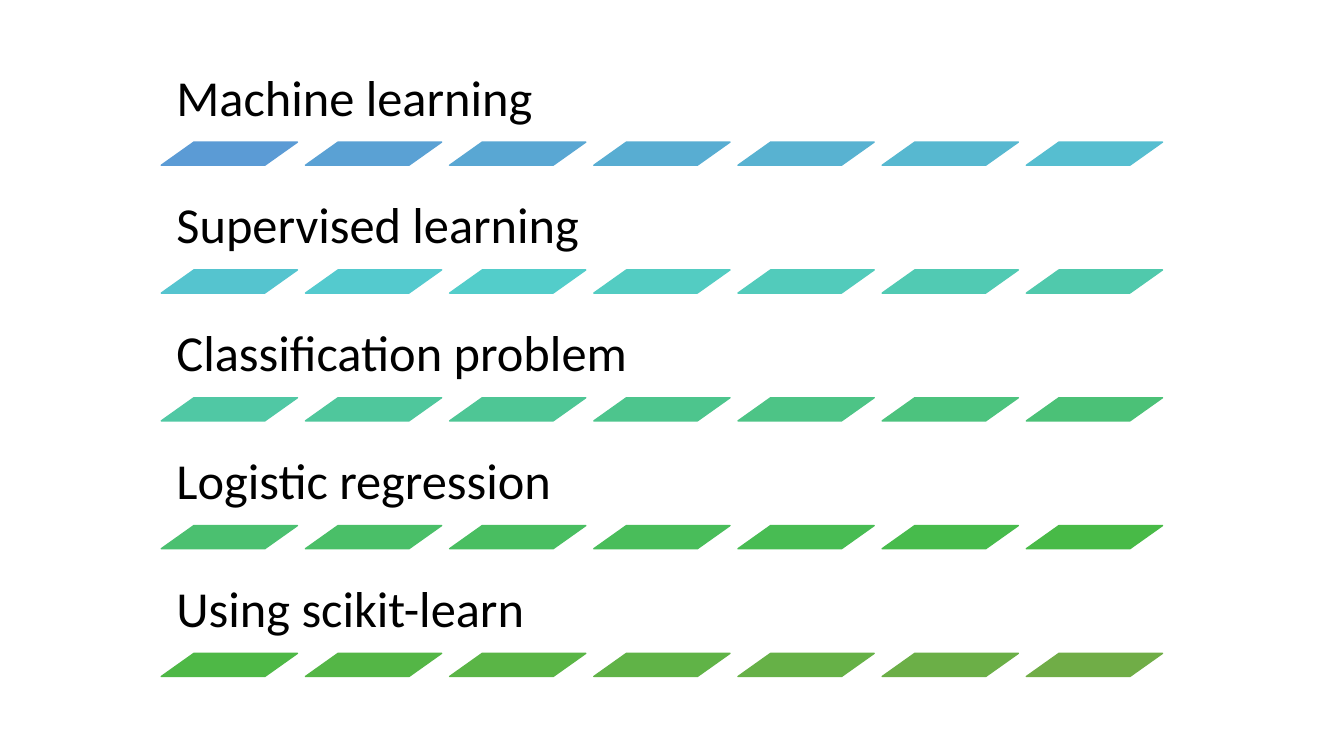
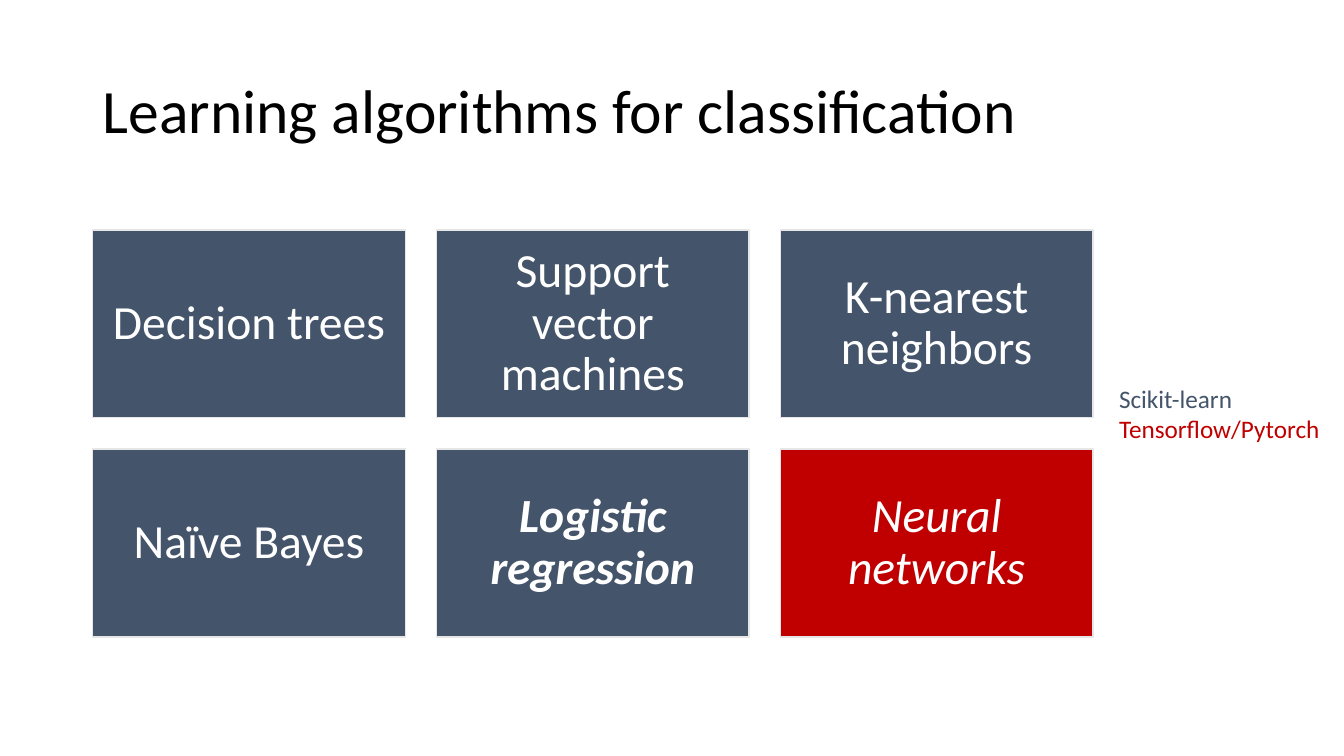
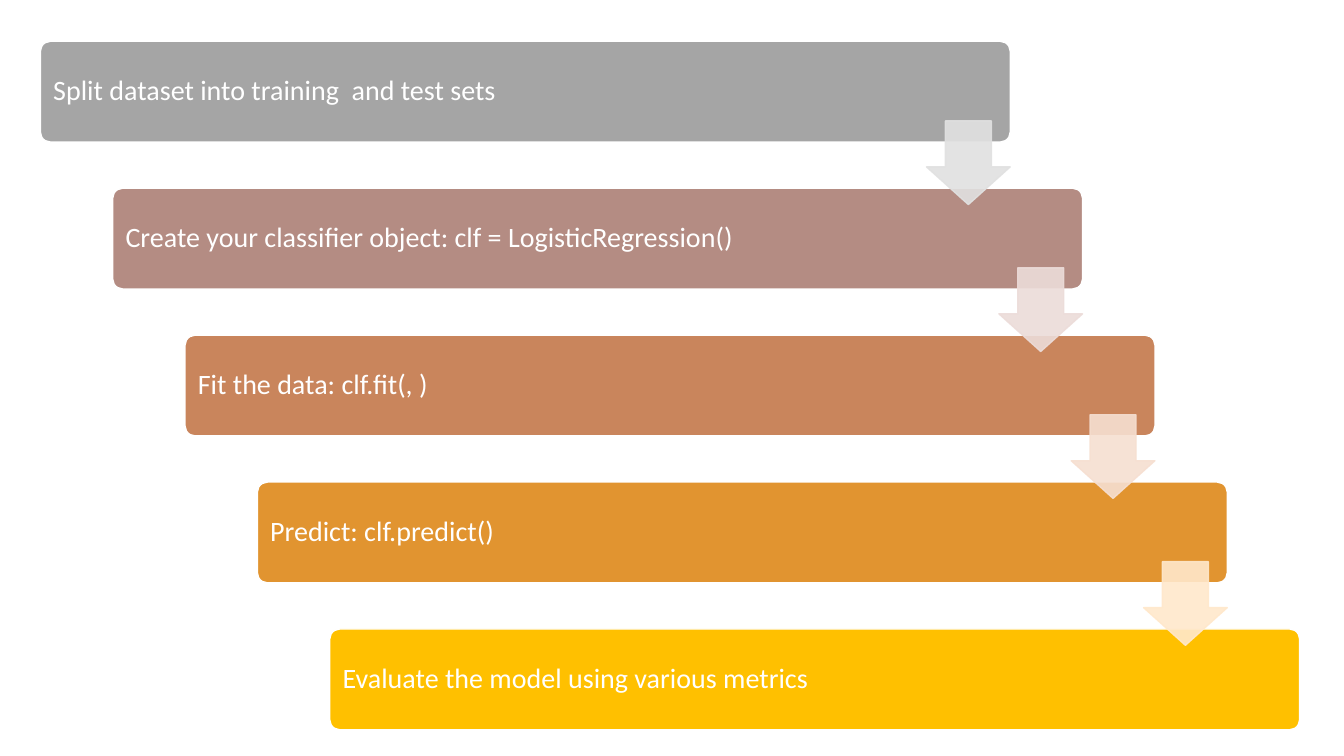
import colorsys

from lxml import etree
from pptx import Presentation
from pptx import util as u
from pptx.dml.color import RGBColor
from pptx.enum import shapes, text
from pptx.oxml import ns

SLIDE_W, SLIDE_H = 13.33, 7.5
FONT = "Calibri"
BLACK = RGBColor(0x00, 0x00, 0x00)
WHITE = RGBColor(0xFF, 0xFF, 0xFF)
BLUE = RGBColor(0x5B, 0x9B, 0xD5)
GREEN = RGBColor(0x70, 0xAD, 0x47)
SLATE = RGBColor(0x44, 0x54, 0x6A)
RED = RGBColor(0xC0, 0x00, 0x00)
PALE = RGBColor(0xE7, 0xE6, 0xE6)
GREY = RGBColor(0xA5, 0xA5, 0xA5)
GOLD = RGBColor(0xFF, 0xC0, 0x00)
PALE_GREY = RGBColor(0xE1, 0xE1, 0xE1)
PALE_GOLD = RGBColor(0xFF, 0xE8, 0xCB)

SHAPE = shapes.MSO_SHAPE
ALIGN = text.PP_ALIGN
ANCHOR = text.MSO_ANCHOR


def blend(first, last, count):
    """Return count colours whose hue, lightness and saturation run evenly."""
    a, b = (colorsys.rgb_to_hls(*(v / 255 for v in c)) for c in (first, last))
    colours = []
    for i in range(count):
        hls = [x + (y - x) * i / (count - 1) for x, y in zip(a, b)]
        colours.append(RGBColor(*(round(v * 255) for v in colorsys.hls_to_rgb(*hls))))
    return colours


def write(sp, lines, size, color=WHITE, colors=None, bold=False, italic=False,
          align=ALIGN.LEFT, anchor=ANCHOR.MIDDLE, inset=(0.1, 0.05),
          spacing=0.9, wrap=True):
    """Fill a shape with one paragraph per line; colors gives one per line."""
    tf = sp.text_frame
    tf.word_wrap = wrap
    tf.vertical_anchor = anchor
    tf.margin_left = tf.margin_right = u.Inches(inset[0])
    tf.margin_top = tf.margin_bottom = u.Inches(inset[1])
    for i, line in enumerate(lines.split("\n")):
        p = tf.paragraphs[0] if i == 0 else tf.add_paragraph()
        p.alignment = align
        p.line_spacing = spacing
        r = p.add_run()
        r.text = line
        r.font.name = FONT
        r.font.size = u.Pt(size)
        r.font.bold = bold
        r.font.italic = italic
        r.font.color.rgb = colors[i] if colors else color


def add_label(s, box, lines, **fmt):
    sp = s.shapes.add_textbox(*map(u.Inches, box))
    write(sp, lines, **fmt)


def add_block(s, kind, box, fill, line, adjust=(), alpha=None):
    sp = s.shapes.add_shape(kind, *map(u.Inches, box))
    sp.shadow.inherit = False
    sp.fill.solid()
    sp.fill.fore_color.rgb = fill
    sp.line.color.rgb = line
    sp.line.width = u.Pt(1)
    for i, value in enumerate(adjust):
        sp.adjustments[i] = value
    if alpha:
        for clr in sp._element.spPr.iter(ns.qn("a:srgbClr")):
            etree.SubElement(clr, ns.qn("a:alpha")).set("val", str(alpha * 1000))
    return sp


def topic_list(s, box, topics, dashes=7):
    """Stack topics, each underlined by a row of slanted dashes."""
    x, y, w, h = box
    row, col = h / len(topics), w / dashes
    label_h, dash_w, dash_h = 0.92, col * 0.945, 0.23
    colours = blend(BLUE, GREEN, len(topics) * dashes)
    for i, topic in enumerate(topics):
        top = y + i * row
        add_label(s, (x, top, w, label_h), topic, size=36, color=BLACK,
                  anchor=ANCHOR.BOTTOM, inset=(0.15, 0.15))
        for j in range(dashes):
            c = colours[i * dashes + j]
            add_block(s, SHAPE.PARALLELOGRAM,
                      (x + j * col, top + label_h, dash_w, dash_h), c, c, [1.408])


def tile_grid(s, box, tiles, cols=3, gap=0.31):
    """Lay tiles of (text, fill, font format) out row by row."""
    x, y, w, h = box
    rows = len(tiles) // cols
    tile_w, tile_h = (w - gap * (cols - 1)) / cols, (h - gap * (rows - 1)) / rows
    for i, (label, fill, fmt) in enumerate(tiles):
        row, col = divmod(i, cols)
        sp = add_block(s, SHAPE.RECTANGLE,
                       (x + col * (tile_w + gap), y + row * (tile_h + gap), tile_w, tile_h),
                       fill, PALE)
        write(sp, label, size=34, align=ALIGN.CENTER, inset=(0.14, 0.14), **fmt)


def staircase(s, box, steps):
    """Descend from step to step, with an arrow over each joint."""
    x, y, w, h = box
    step_w, step_h, arrow = 9.62, 1, 0.83
    joints = len(steps) - 1
    dx, dy = (w - step_w) / joints, (h - step_h) / joints
    for i, (step, fill) in enumerate(zip(steps, blend(GREY, GOLD, len(steps)))):
        sp = add_block(s, SHAPE.ROUNDED_RECTANGLE,
                       (x + i * dx, y + i * dy, step_w, step_h), fill, WHITE, [0.1])
        write(sp, step, size=20, inset=(0.1, 0.1))
    for i, c in enumerate(blend(PALE_GREY, PALE_GOLD, joints)):
        add_block(s, SHAPE.DOWN_ARROW,
                  (x + i * dx + step_w - arrow, y + i * dy + 0.79, arrow, arrow),
                  c, c, [0.55, 0.45], alpha=90)


def topics_slide(s):
    topic_list(s, (0.12 * SLIDE_W, 0.49, 10.01, 6.34),
               ["Machine learning", "Supervised learning", "Classification problem",
                "Logistic regression", "Using scikit-learn"])


def algorithms_slide(s):
    left = 0.92
    add_label(s, (left, 0.4, SLIDE_W - 2 * left, 1.45),
              "Learning algorithms for classification", size=44, color=BLACK)
    tile_grid(s, (left, 2.28, 9.92, 4.04), [
        ("Decision trees", SLATE, {}),
        ("Support vector machines", SLATE, {}),
        ("K-nearest neighbors", SLATE, {}),
        ("Naïve Bayes", SLATE, {}),
        ("Logistic regression", SLATE, {"bold": True, "italic": True}),
        ("Neural networks", RED, {"italic": True}),
    ])
    add_label(s, (11, SLIDE_H / 2, 2.21, 0.71), "Scikit-learn\nTensorflow/Pytorch",
              size=18, colors=[SLATE, RED], anchor=ANCHOR.TOP, spacing=1.0, wrap=False)


def workflow_slide(s):
    staircase(s, (0.03 * SLIDE_W, 0.41, 12.49, 6.83),
              ["Split dataset into training  and test sets",
               "Create your classifier object: clf = LogisticRegression()",
               "Fit the data: clf.fit(, )",
               "Predict: clf.predict()",
               "Evaluate the model using various metrics"])


def main():
    prs = Presentation()
    prs.slide_width, prs.slide_height = u.Inches(SLIDE_W), u.Inches(SLIDE_H)
    for build in (topics_slide, algorithms_slide, workflow_slide):
        build(prs.slides.add_slide(prs.slide_layouts[6]))
    prs.save("out.pptx")


if __name__ == "__main__":
    main()
